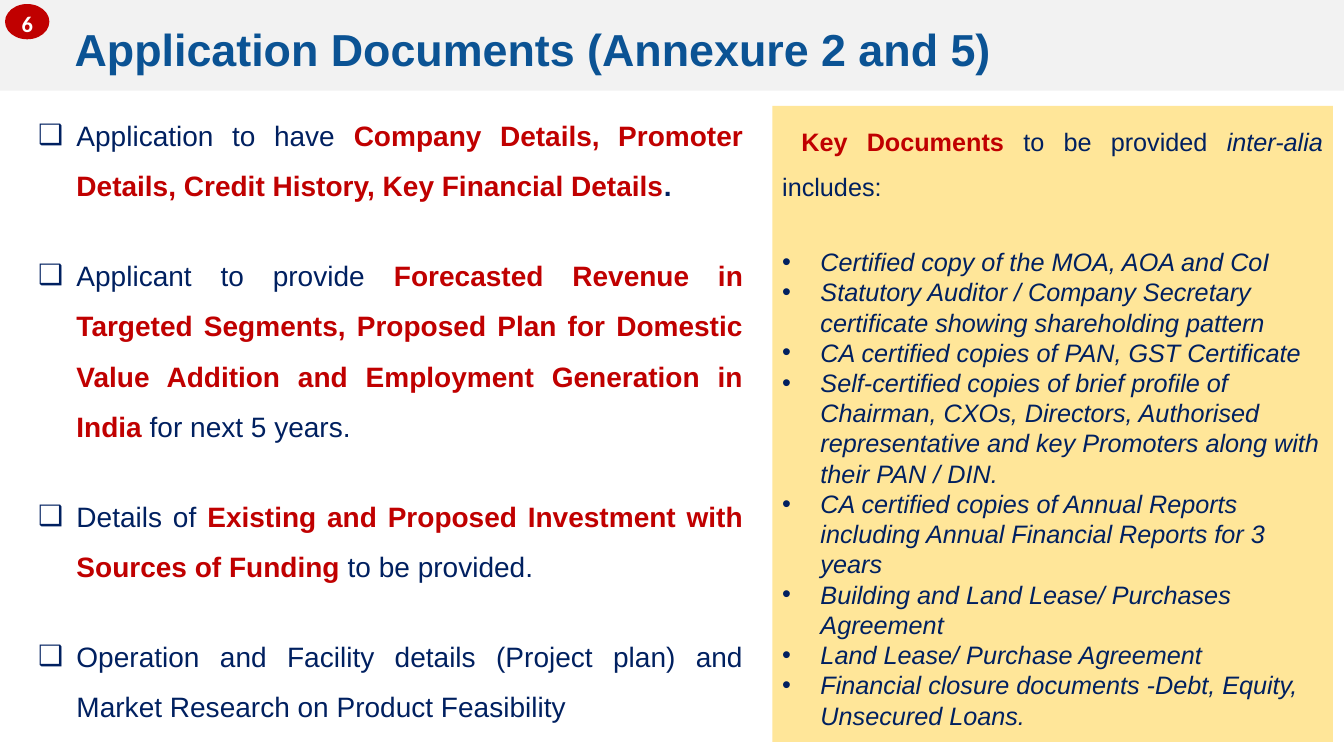
from dataclasses import dataclass

from lxml.etree import SubElement
from pptx import Presentation
from pptx.dml.color import RGBColor
from pptx.enum.shapes import MSO_SHAPE as Shape
from pptx.enum.text import MSO_ANCHOR as Anchor, MSO_AUTO_SIZE as Fit, PP_ALIGN as Align
from pptx.oxml.ns import qn
from pptx.util import Pt

PX = 9144  # EMU in one px: 100 px to the inch
HANG = 38


@dataclass(frozen=True)
class Theme:
    font: str = "Arial"
    badge_font: str = "Calibri"
    band: str = "F2F2F2"
    blue: str = "0B5394"
    navy: str = "002060"
    red: str = "C00000"
    sand: str = "FFE699"
    white: str = "FFFFFF"
    head: int = 32
    body: int = 20
    list: int = 18
    badge: int = 16


class Deck:
    def __init__(self, theme):
        self.theme = theme
        self.file = Presentation()
        self.file.slide_width, self.file.slide_height = 1333 * PX, 750 * PX
        self.slide = self.file.slides.add_slide(self.file.slide_layouts[5])

    def style(self, font, size, color, bold=False, italic=False, name=None):
        font.name = name or self.theme.font
        font.size = Pt(size)
        font.color.rgb = RGBColor.from_string(color)
        font.bold, font.italic = bold, italic

    def title(self, text, box):
        head = self.slide.shapes.title
        head.left, head.top, head.width, head.height = [n * PX for n in box]
        frame = head.text_frame
        frame.margin_left, frame.margin_right = 24 * PX, 13 * PX
        frame.margin_top = frame.margin_bottom = 13 * PX
        frame.vertical_anchor, frame.auto_size = Anchor.MIDDLE, Fit.NONE
        frame.text = text
        line = frame.paragraphs[0]
        line.alignment = Align.LEFT
        self.style(line.runs[0].font, self.theme.head, self.theme.blue, True)

    def shape(self, kind, box, fill):
        item = self.slide.shapes.add_shape(kind, *[n * PX for n in box])
        item.shadow.inherit = False
        item.fill.solid()
        item.fill.fore_color.rgb = RGBColor.from_string(fill)
        item.line.fill.background()
        return item

    def band(self, box):
        """Draw the strip that lies behind the title."""
        strip = self.shape(Shape.RECTANGLE, box, self.theme.band).element
        strip.getparent().insert(2, strip)

    def badge(self, text, box):
        look = self.theme
        frame = self.shape(Shape.OVAL, box, look.red).text_frame
        frame.margin_left = frame.margin_right = 0
        frame.margin_top = frame.margin_bottom = 0
        frame.vertical_anchor = Anchor.MIDDLE
        frame.text = text
        line = frame.paragraphs[0]
        line.alignment, line.line_spacing = Align.CENTER, 1.14
        self.style(line.runs[0].font, look.badge, look.white, True, name=look.badge_font)

    def text(self, box):
        return self.slide.shapes.add_textbox(*[n * PX for n in box]).text_frame

    def panel(self, box):
        return self.shape(Shape.RECTANGLE, box, self.theme.sand).text_frame

    def fill(self, frame, paras):
        frame.word_wrap, frame.vertical_anchor = True, Anchor.TOP
        frame.auto_size = Fit.SHAPE_TO_FIT_TEXT
        for i, (parts, opts) in enumerate(paras):
            line = frame.paragraphs[0] if i == 0 else frame.add_paragraph()
            self.para(line, parts, **opts)

    def para(self, line, parts, size, mark=None, left=0, first=0,
             align=Align.LEFT, lead=1.0, gap=0):
        """Write (text, marks) parts; the marks are h for red, b for bold, i for italic."""
        props = line._p.get_or_add_pPr()
        props.set("marL", str(left * PX))
        props.set("indent", str(first * PX))
        if mark:
            SubElement(props, qn("a:buFont")).set("typeface", self.theme.font)
            SubElement(props, qn("a:buChar")).set("char", mark)
        line.alignment, line.line_spacing = align, lead
        line.space_before = Pt(gap)
        for text, marks in parts:
            run = line.add_run()
            run.text = text
            color = self.theme.red if "h" in marks else self.theme.navy
            self.style(run.font, size, color, "h" in marks or "b" in marks, "i" in marks)


POINTS = [
    [("Application to have ", ""),
     ("Company Details, Promoter Details, Credit History, Key Financial Details", "h"),
     (".", "b")],
    [("Applicant to provide ", ""),
     ("Forecasted Revenue in Targeted Segments, Proposed Plan for Domestic "
      "Value Addition and Employment Generation in India ", "h"),
     ("for next 5 years.", "")],
    [("Details of ", ""),
     ("Existing and Proposed Investment with Sources of Funding ", "h"),
     ("to be provided.", "")],
    [("Operation and Facility details (Project plan) and "
      "Market Research on Product Feasibility", "")],
]
INTRO = [("Key Documents ", "h"), ("to be provided ", ""),
         ("inter-alia ", "i"), ("includes:", "")]
PAPERS = [
    "Certified copy of the MOA, AOA and CoI",
    "Statutory Auditor / Company Secretary certificate showing shareholding pattern",
    "CA certified copies of PAN, GST Certificate",
    "Self-certified copies of brief profile of Chairman, CXOs, Directors, Authorised "
    "representative and key Promoters along with their PAN / DIN.",
    "CA certified copies of Annual Reports including Annual Financial Reports for 3 years",
    "Building and Land Lease/ Purchases Agreement",
    "Land Lease/ Purchase Agreement",
    "Financial closure documents -Debt, Equity, Unsecured Loans.",
]


def main():
    look = Theme()
    deck = Deck(look)
    deck.band((0, 0, 1333, 90))
    deck.title("Application Documents (Annexure 2 and 5)", (50, 5, 1258, 87))
    deck.badge("6", (5, 4, 44, 35))

    wide = dict(align=Align.JUSTIFY, lead=1.5)
    hang = dict(left=HANG, first=-HANG)
    deck.fill(deck.text((28, 96, 719, 636)), [
        (parts, dict(size=look.body, mark="❑", gap=28 if i else 0, **wide, **hang))
        for i, parts in enumerate(POINTS)])

    intro = (INTRO, dict(size=look.list, first=19, **wide))
    papers = [([(text, "i")], dict(size=look.list, mark="•", gap=0 if i else 32, **hang))
              for i, text in enumerate(PAPERS)]
    deck.fill(deck.panel((766, 105, 556, 631)), [intro, *papers])
    deck.file.save("out.pptx")


if __name__ == "__main__":
    main()
